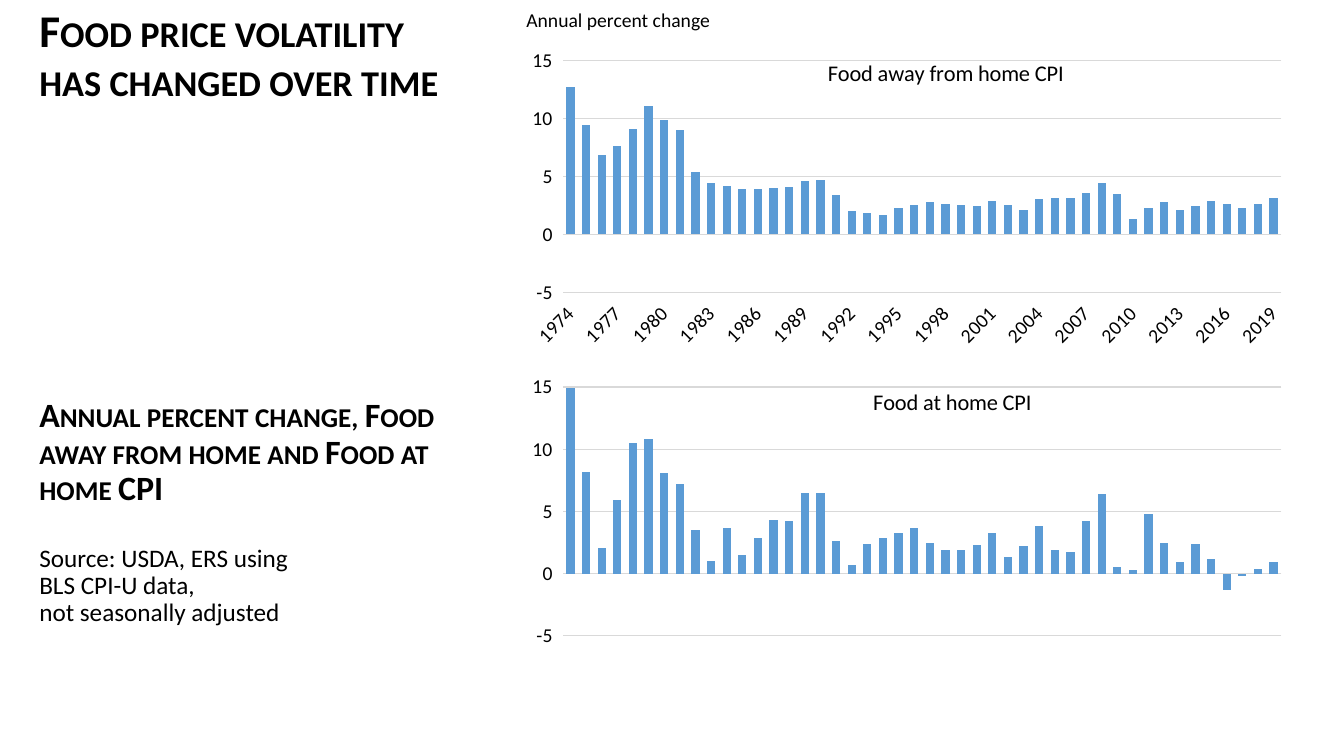
from lxml.etree import SubElement
from pptx import Presentation
from pptx.chart.data import CategoryChartData
from pptx.dml.color import RGBColor
from pptx.enum.chart import XL_CHART_TYPE, XL_TICK_LABEL_POSITION, XL_TICK_MARK
from pptx.enum.text import MSO_ANCHOR
from pptx.oxml import parse_xml
from pptx.oxml.ns import nsdecls, qn
from pptx.util import Inches, Pt

FONT = "Calibri"
BLACK = "000000"
GRID_GRAY = "D9D9D9"
BAR_BLUE = "5B9BD5"
CHART_LEFT, CHART_WIDTH = 5.12, 7.74
PLOT_LEFT, PLOT_WIDTH = 5.58, 7.13

AWAY_FROM_HOME = [
    12.7, 9.4, 6.8, 7.6, 9.1, 11.1, 9.9, 9, 5.4, 4.4, 4.2, 3.9, 3.9, 4, 4.1, 4.6,
    4.7, 3.4, 2, 1.8, 1.7, 2.3, 2.5, 2.8, 2.6, 2.5, 2.4, 2.9, 2.5, 2.1, 3, 3.1,
    3.1, 3.6, 4.4, 3.5, 1.3, 2.3, 2.8, 2.1, 2.4, 2.9, 2.6, 2.3, 2.6, 3.1,
]
AT_HOME = [
    14.9, 8.2, 2.1, 5.9, 10.5, 10.8, 8.1, 7.2, 3.5, 1, 3.7, 1.5, 2.9, 4.3, 4.2, 6.5,
    6.5, 2.6, 0.7, 2.4, 2.9, 3.3, 3.7, 2.5, 1.9, 1.9, 2.3, 3.3, 1.3, 2.2, 3.8, 1.9,
    1.7, 4.2, 6.4, 0.5, 0.3, 4.8, 2.5, 0.9, 2.4, 1.2, -1.3, -0.2, 0.4, 0.9,
]


def color(value):
    return RGBColor.from_string(value)


def style_font(font, size, bold=False):
    font.name = FONT
    font.size = Pt(size)
    font.bold = bold
    font.color.rgb = color(BLACK)


def add_text(slide, text, left, top, width, height, size, heading=False, spacing=0.9):
    shape = slide.shapes.add_textbox(Inches(left), Inches(top), Inches(width), Inches(height))
    frame = shape.text_frame
    frame.word_wrap = True
    frame.vertical_anchor = MSO_ANCHOR.TOP
    frame.margin_left = frame.margin_right = frame.margin_top = frame.margin_bottom = 0
    paragraph = frame.paragraphs[0]
    paragraph.text = text
    paragraph.line_spacing = spacing
    for run in paragraph.runs:
        style_font(run.font, size, heading)
        if heading:
            run.font._element.set("cap", "small")


def manual_layout(left, top, width=None, height=None):
    values = {"x": left, "y": top}
    target = ""
    if width is not None:
        values.update(w=width, h=height)
        target = '<c:layoutTarget val="inner"/>'
    modes = '<c:xMode val="edge"/><c:yMode val="edge"/>'
    sizes = "".join(f'<c:{name} val="{value:.4f}"/>' for name, value in values.items())
    return parse_xml(
        f'<c:layout {nsdecls("c")}><c:manualLayout>{target}{modes}{sizes}'
        "</c:manualLayout></c:layout>"
    )


def replace_layout(parent, layout, position):
    for existing in parent.findall(qn("c:layout")):
        parent.remove(existing)
    parent.insert(position, layout)


def style_axis(axis):
    axis.major_tick_mark = axis.minor_tick_mark = XL_TICK_MARK.NONE
    axis.tick_label_position = XL_TICK_LABEL_POSITION.LOW
    style_font(axis.tick_labels.font, 14)


def style_value_axis(axis):
    style_axis(axis)
    axis.minimum_scale, axis.maximum_scale, axis.major_unit = -5, 15, 5
    axis.tick_labels.number_format = "#,##0"
    axis.tick_labels.number_format_is_linked = False
    axis.format.line.fill.background()
    axis.major_gridlines.format.line.color.rgb = color(GRID_GRAY)
    axis.major_gridlines.format.line.width = Pt(0.75)


def style_category_axis(axis, visible):
    axis.visible = visible
    if not visible:
        return
    style_axis(axis)
    axis.format.line.color.rgb = color(GRID_GRAY)
    axis.format.line.width = Pt(0.75)
    element = axis._element
    element.find(qn("c:txPr")).find(qn("a:bodyPr")).set("rot", "-2700000")
    skip = SubElement(element, qn("c:tickLblSkip"))
    skip.set("val", "3")
    element.find(qn("c:noMultiLvlLbl")).addprevious(skip)


def add_column_chart(slide, title, categories, values, top, height, plot_top, plot_height,
                     title_left, title_top, show_years):
    data = CategoryChartData()
    data.categories = categories
    data.add_series("Series 1", values)
    chart = slide.shapes.add_chart(
        XL_CHART_TYPE.COLUMN_CLUSTERED, Inches(CHART_LEFT), Inches(top),
        Inches(CHART_WIDTH), Inches(height), data,
    ).chart
    style_font(chart.font, 10)
    chart.has_legend = False
    chart.has_title = True
    chart.chart_title.include_in_layout = False
    paragraph = chart.chart_title.text_frame.paragraphs[0]
    paragraph.text = title
    style_font(paragraph.runs[0].font, 16)
    replace_layout(
        chart.chart_title._element,
        manual_layout((title_left - CHART_LEFT) / CHART_WIDTH, (title_top - top) / height), 1,
    )
    replace_layout(
        chart._chartSpace.chart.plotArea,
        manual_layout((PLOT_LEFT - CHART_LEFT) / CHART_WIDTH, (plot_top - top) / height,
                      PLOT_WIDTH / CHART_WIDTH, plot_height / height), 0,
    )
    style_value_axis(chart.value_axis)
    style_category_axis(chart.category_axis, show_years)
    plot = chart.plots[0]
    plot.gap_width, plot.overlap = 90, -27
    plot.vary_by_categories = False
    series = plot.series[0]
    series.invert_if_negative = False
    series.format.fill.solid()
    series.format.fill.fore_color.rgb = color(BAR_BLUE)


def main():
    presentation = Presentation()
    presentation.slide_width, presentation.slide_height = Inches(13.33), Inches(7.5)
    slide = presentation.slides.add_slide(presentation.slide_layouts[6])
    add_text(slide, "Food price volatility\vhas changed over time",
             0.39, 0.08, 4.46, 1, 32.4, heading=True)
    add_text(slide, "Annual percent change, Food away from home and Food at home CPI",
             0.39, 3.95, 4.46, 1.12, 24.3, heading=True)
    add_text(slide, "Source: USDA, ERS using\vBLS CPI-U data,\vnot seasonally adjusted",
             0.39, 5.41, 4.46, 0.83, 18)
    add_column_chart(slide, "Food at home CPI", [str(n) for n in range(1, 47)], AT_HOME,
                     3.16, 3.34, 3.84, 2.47, 8.62, 3.8, False)
    add_column_chart(slide, "Food away from home CPI", [str(y) for y in range(1974, 2020)],
                     AWAY_FROM_HOME, -0.08, 3.6, 0.6, 2.3, 8.17, 0.53, True)
    add_text(slide, "Annual percent change", 5.22, 0.08, 1.99, 0.24, 14, spacing=1)
    presentation.save("out.pptx")


if __name__ == "__main__":
    main()
